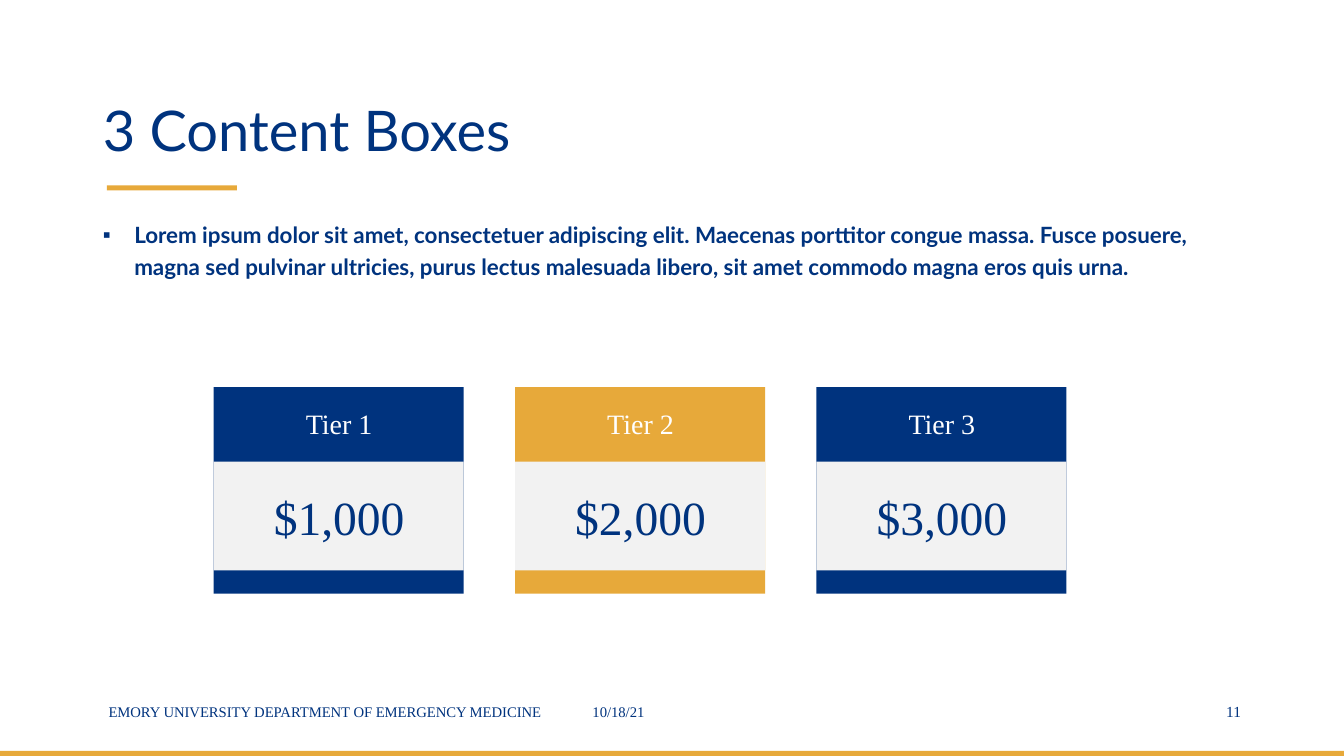
"""Builds a slide with three price tiers under a title and a lead sentence."""
from dataclasses import dataclass

from lxml import etree
from pptx import Presentation
from pptx.dml.color import RGBColor
from pptx.enum import shapes, text
from pptx.oxml.ns import qn
from pptx.util import Pt

HEADING = "3 Content Boxes"
LEAD = (
    "Lorem ipsum dolor sit amet, consectetuer adipiscing elit. Maecenas porttitor "
    "congue massa. Fusce posuere, magna sed pulvinar ultricies, purus lectus "
    "malesuada libero, sit amet commodo magna eros quis urna."
)
TIERS = [
    ("Tier 1", "$1,000", "navy"),
    ("Tier 2", "$2,000", "gold"),
    ("Tier 3", "$3,000", "navy"),
]
DEPARTMENT = "EMORY UNIVERSITY DEPARTMENT OF EMERGENCY MEDICINE"
DATE = "10/18/21"
PAGE = "11"


@dataclass(frozen=True)
class Theme:
    """Colours, fonts and type sizes."""
    navy: str = "00337E"
    gold: str = "E7A93A"
    grey: str = "F2F2F2"
    white: str = "FFFFFF"
    sans: str = "Lato"
    serif: str = "Times New Roman"
    heading: float = 40
    lead: float = 16
    tier: float = 20
    price: float = 34
    footer: float = 10.5
    page: float = 11


THEME = Theme()
ALIGN = text.PP_ALIGN
ANCHOR = text.MSO_ANCHOR
WIDTH, HEIGHT = 960, 540
MARGIN, CONTENT_WIDTH = 66.24, 828
FOOTER_TOP, FOOTER_HEIGHT = 493.92, 28.8
CARD_LEFT, CARD_TOP, CARD_WIDTH, CARD_HEIGHT = 152.64, 276.48, 178.56, 147.6
CARD_PITCH = 215.28
PANEL_TOP, PANEL_HEIGHT = 329.76, 77.76
LABEL_INSET, LABEL_WIDTH = 9.36, 160.56


def place(shape, left, top, width, height):
    """Move and size a shape, in points."""
    shape.left, shape.top = Pt(left), Pt(top)
    shape.width, shape.height = Pt(width), Pt(height)


def style(paragraph, size, face, colour, align=ALIGN.LEFT, bold=False):
    """Format one paragraph."""
    paragraph.alignment = align
    font = paragraph.font
    font.size, font.name, font.bold = Pt(size), face, bold
    font.color.rgb = RGBColor.from_string(colour)


def add_block(slide, box, colour):
    """Add a plain filled rectangle."""
    block = slide.shapes.add_shape(shapes.MSO_SHAPE.RECTANGLE, *map(Pt, box))
    block.shadow.inherit = False
    block.fill.solid()
    block.fill.fore_color.rgb = RGBColor.from_string(colour)
    block.line.fill.background()


def add_label(slide, wording, box, size, colour, align=ALIGN.CENTER, anchor=ANCHOR.TOP):
    """Add a serif text box and return its frame."""
    frame = slide.shapes.add_textbox(*map(Pt, box)).text_frame
    frame.word_wrap = True
    frame.vertical_anchor = anchor
    frame.text = wording
    style(frame.paragraphs[0], size, THEME.serif, colour, align)
    return frame


def fill_heading(heading):
    """Write the title placeholder."""
    place(heading, MARGIN, 27.36, CONTENT_WIDTH, 92.88)
    frame = heading.text_frame
    frame.text = HEADING
    frame.auto_size = text.MSO_AUTO_SIZE.NONE
    frame.vertical_anchor = ANCHOR.BOTTOM
    frame.paragraphs[0].line_spacing = 0.9
    style(frame.paragraphs[0], THEME.heading, THEME.sans, THEME.navy)


def fill_lead(lead):
    """Write the bulleted body placeholder."""
    place(lead, MARGIN, 150.48, CONTENT_WIDTH, 102.96)
    frame = lead.text_frame
    frame.text = LEAD
    frame.auto_size = text.MSO_AUTO_SIZE.NONE
    sentence = frame.paragraphs[0]
    sentence.line_spacing = 1.2
    sentence.space_before = Pt(0)
    properties = sentence._p.get_or_add_pPr()
    indent = Pt(22.5)
    properties.set("marL", str(indent))
    properties.set("indent", str(-indent))
    etree.SubElement(properties, qn("a:buChar")).set("char", "▪")
    style(sentence, THEME.lead, THEME.sans, THEME.navy, bold=True)


def add_tiers(slide):
    """Add the row of price cards."""
    for index, (tier, price, accent) in enumerate(TIERS):
        left = CARD_LEFT + index * CARD_PITCH
        label_left = left + LABEL_INSET
        add_block(slide, (left, CARD_TOP, CARD_WIDTH, CARD_HEIGHT), getattr(THEME, accent))
        add_block(slide, (left, PANEL_TOP, CARD_WIDTH, PANEL_HEIGHT), THEME.grey)
        add_label(slide, tier, (label_left, 286.56, LABEL_WIDTH, 31.68), THEME.tier, THEME.white)
        add_label(slide, price, (label_left, 344.88, LABEL_WIDTH, 48.24), THEME.price, THEME.navy)


def add_footer(slide):
    """Add the department, date and page number."""
    entries = [
        (DATE, 416.16, 216, THEME.footer, ALIGN.LEFT),
        (DEPARTMENT, MARGIN, 339.12, THEME.footer, ALIGN.CENTER),
        (PAGE, 843.84, 49.68, THEME.page, ALIGN.RIGHT),
    ]
    for wording, left, width, size, align in entries:
        box = (left, FOOTER_TOP, width, FOOTER_HEIGHT)
        frame = add_label(slide, wording, box, size, THEME.navy, align, ANCHOR.MIDDLE)
        if wording == DEPARTMENT:
            frame.margin_left = 0


def main():
    """Build and save the slide."""
    deck = Presentation()
    deck.slide_width, deck.slide_height = Pt(WIDTH), Pt(HEIGHT)
    slide = deck.slides.add_slide(deck.slide_layouts[1])
    add_block(slide, (76.32, 132.48, 92.88, 3.6), THEME.gold)
    add_block(slide, (0, 536.4, WIDTH, 3.6), THEME.gold)
    fill_heading(slide.shapes.title)
    fill_lead(slide.placeholders[1])
    add_footer(slide)
    add_tiers(slide)
    deck.save("out.pptx")


if __name__ == "__main__":
    main()
